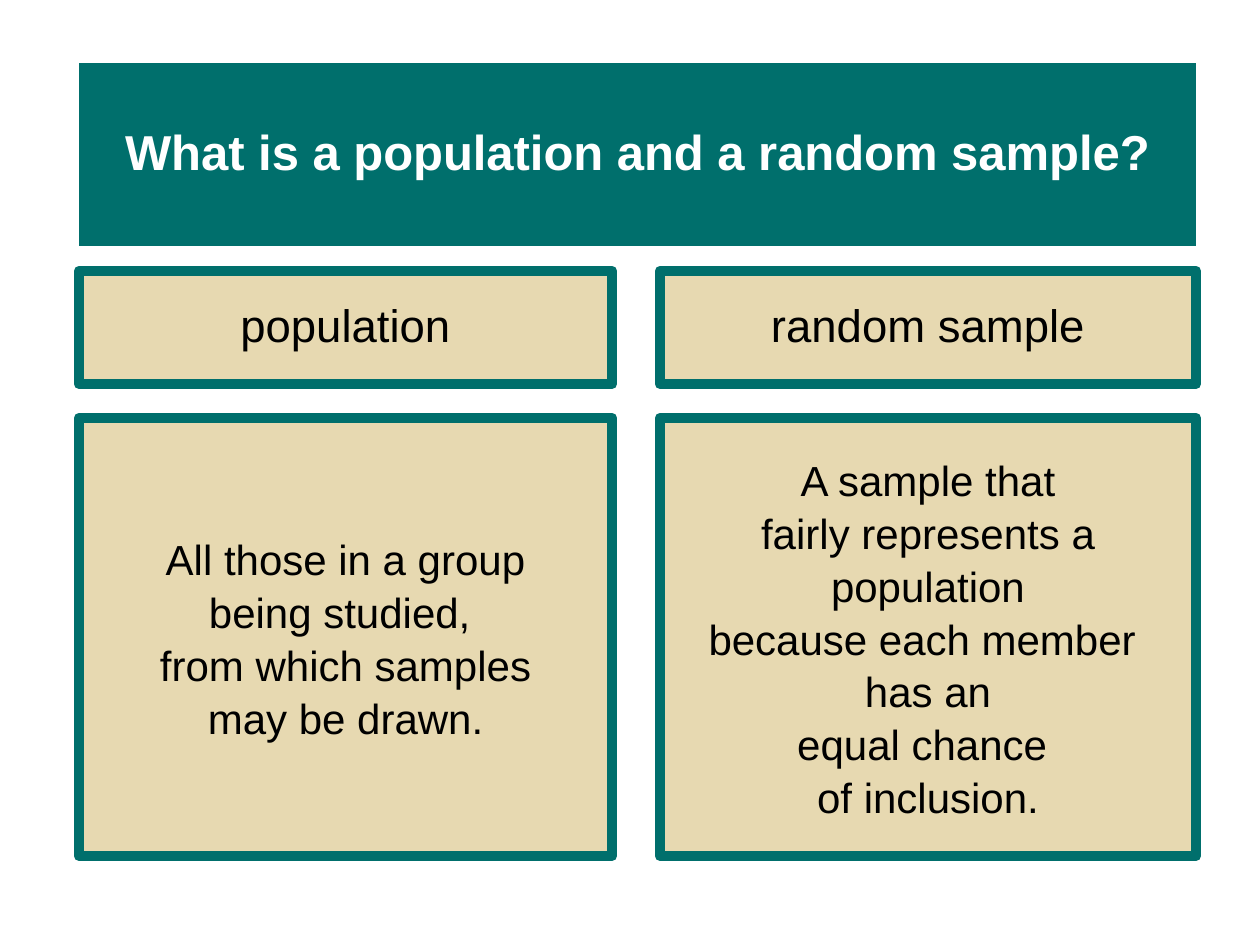
from dataclasses import dataclass

from lxml import etree
from pptx import Presentation
from pptx.dml.color import RGBColor
from pptx.enum.text import MSO_ANCHOR, MSO_AUTO_SIZE, PP_ALIGN
from pptx.oxml.ns import qn
from pptx.util import Emu, Pt

MIDDLE = MSO_ANCHOR.MIDDLE
NO_FIT = MSO_AUTO_SIZE.NONE
CENTER = PP_ALIGN.CENTER
PX = 914400 / 126
COMPARISON = 4


@dataclass(frozen=True)
class Theme:
    font: str = "Arial"
    teal: RGBColor = RGBColor(0x00, 0x6F, 0x6C)
    sand: RGBColor = RGBColor(0xE7, 0xD9, 0xB1)
    white: RGBColor = RGBColor(0xFF, 0xFF, 0xFF)
    black: RGBColor = RGBColor(0x00, 0x00, 0x00)
    title_size: int = 28
    term_size: int = 26
    definition_size: int = 24
    border: int = 6


class SlideBuilder:
    """Fills the placeholders of one slide in one theme."""

    def __init__(self, slide, theme):
        self.slide = slide
        self.theme = theme

    def _panel(self, idx, box, fill):
        sp = self.slide.placeholders[idx]
        for name, px in zip(("left", "top", "width", "height"), box):
            setattr(sp, name, Emu(round(px * PX)))
        sp.fill.solid()
        sp.fill.fore_color.rgb = fill
        tf = sp.text_frame
        frame = {"word_wrap": True, "auto_size": NO_FIT, "vertical_anchor": MIDDLE}
        for name, value in frame.items():
            setattr(tf, name, value)
        return sp

    def _write(self, sp, lines, size, color, spacing, before=0, bold=False):
        tf = sp.text_frame
        para = {"alignment": CENTER, "line_spacing": spacing,
                "space_before": Pt(before), "space_after": Pt(0)}
        font = {"name": self.theme.font, "size": Pt(size), "bold": bold}
        for i, line in enumerate(lines):
            p = tf.add_paragraph() if i else tf.paragraphs[0]
            for name, value in para.items():
                setattr(p, name, value)
            pPr = p._p.get_or_add_pPr()
            pPr.set("marL", "0")
            pPr.set("indent", "0")
            etree.SubElement(pPr, qn("a:buNone"))
            r = p.add_run()
            r.text = line
            for name, value in font.items():
                setattr(r.font, name, value)
            r.font.color.rgb = color

    def title(self, box, text):
        t = self.theme
        sp = self._panel(0, box, t.teal)
        self._write(sp, [text], t.title_size, t.white, 0.9, bold=True)

    def _framed(self, idx, box):
        sp = self._panel(idx, box, self.theme.sand)
        sp.line.color.rgb = self.theme.teal
        sp.line.width = Pt(self.theme.border)
        return sp

    def term(self, idx, box, text):
        t = self.theme
        self._write(self._framed(idx, box), [text], t.term_size, t.black, 0.9, before=7.5)

    def definition(self, idx, box, lines):
        t = self.theme
        self._write(self._framed(idx, box), lines, t.definition_size, t.black, 1.05)


def main():
    prs = Presentation()
    prs.slide_width, prs.slide_height = Emu(round(1260 * PX)), Emu(round(945 * PX))
    slide = prs.slides.add_slide(prs.slide_layouts[COMPARISON])
    builder = SlideBuilder(slide, Theme())

    builder.title((79, 63, 1117, 183), "What is a population and a random sample?")
    columns = [
        (79, 533, "population",
         ["All those in a group", "being studied, ", "from which samples", "may be drawn."]),
        (660, 536, "random sample",
         ["A sample that", "fairly represents a population", "because each member ",
          "has an", "equal chance ", "of inclusion."]),
    ]
    for i, (left, width, term, lines) in enumerate(columns):
        builder.term(2 * i + 1, (left, 271, width, 113), term)
        builder.definition(2 * i + 2, (left, 418, width, 438), lines)

    prs.save("out.pptx")


if __name__ == "__main__":
    main()
